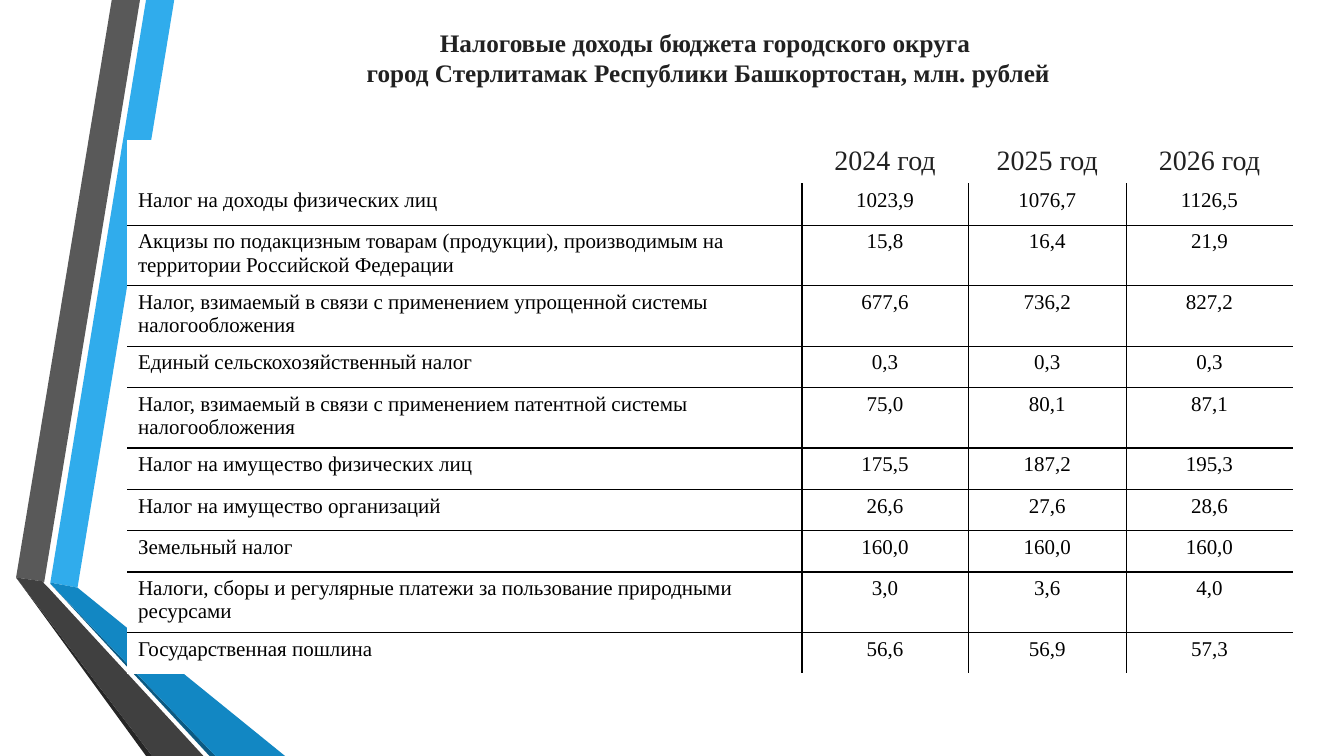
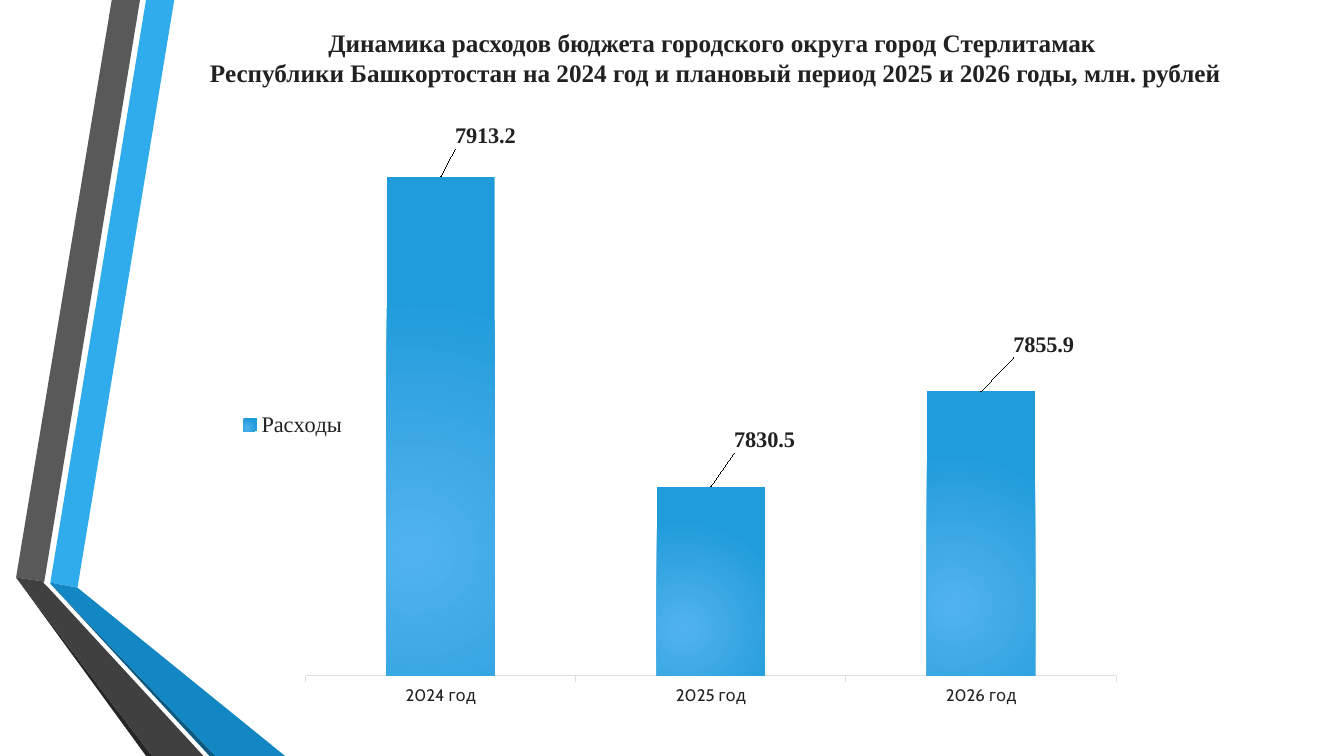
from dataclasses import dataclass

from pptx import Presentation
from pptx.chart.data import CategoryChartData
from pptx.dml.color import RGBColor
from pptx.enum.chart import XL_CHART_TYPE, XL_LABEL_POSITION, XL_LEGEND_POSITION, XL_TICK_MARK
from pptx.enum.text import MSO_ANCHOR, PP_ALIGN
from pptx.oxml import parse_xml
from pptx.oxml.ns import nsdecls, qn
from pptx.util import Inches, Pt

COLUMN_CHART = XL_CHART_TYPE.COLUMN_CLUSTERED
OUTSIDE_END = XL_LABEL_POSITION.OUTSIDE_END
LEGEND_LEFT = XL_LEGEND_POSITION.LEFT
TICK_OUTSIDE = XL_TICK_MARK.OUTSIDE
MIDDLE = MSO_ANCHOR.MIDDLE
LEFT, CENTER = PP_ALIGN.LEFT, PP_ALIGN.CENTER


@dataclass(frozen=True)
class Theme:
    serif: str = "Times New Roman"
    sans: str = "Cabin"
    ink: str = "212121"
    black: str = "000000"
    white: str = "FFFFFF"
    axis: str = "DEDEDE"
    bar_light: str = "51B3ED"
    bar_dark: str = "219CDB"
    title_size: float = 18
    header_size: float = 20
    body_size: float = 15
    label_size: float = 16
    axis_size: float = 12
    chart_size: float = 10
    border: float = 1


THEME = Theme()

BANDS = [
    ("30ACEC", [(0.5, 5.78), (0.77, 5.83), (1.73, 0), (1.45, 0)]),
    ("595959", [(1.39, 0), (1.11, 0), (0.16, 5.73), (0.44, 5.77)]),
    ("262626", [(0.16, 5.73), (1.45, 7.5), (1.51, 7.5)]),
    ("0C5A82", [(0.5, 5.79), (2.08, 7.5), (2.14, 7.5)]),
    ("1287C3", [(0.5, 5.79), (2.14, 7.5), (2.83, 7.5), (0.77, 5.83), (0.5, 5.78)]),
    ("404040", [(2.02, 7.5), (0.48, 5.83), (0.43, 5.78), (0.44, 5.77), (0.16, 5.73), (1.51, 7.5)]),
]

YEARS = ["2024 год", "2025 год", "2026 год"]

TAX_TITLE = (
    "Налоговые доходы бюджета городского округа \v"
    "город Стерлитамак Республики Башкортостан, млн. рублей"
)
TAX_ROWS = [
    ("Налог на доходы физических лиц", "1023,9", "1076,7", "1126,5"),
    ("Акцизы по подакцизным товарам (продукции), производимым на территории Российской Федерации",
     "15,8", "16,4", "21,9"),
    ("Налог, взимаемый в связи с применением упрощенной системы налогообложения",
     "677,6", "736,2", "827,2"),
    ("Единый сельскохозяйственный налог", "0,3", "0,3", "0,3"),
    ("Налог, взимаемый в связи с применением патентной системы налогообложения",
     "75,0", "80,1", "87,1"),
    ("Налог на имущество физических лиц", "175,5", "187,2", "195,3"),
    ("Налог на имущество организаций", "26,6", "27,6", "28,6"),
    ("Земельный налог", "160,0", "160,0", "160,0"),
    ("Налоги, сборы и регулярные платежи за пользование природными ресурсами",
     "3,0", "3,6", "4,0"),
    ("Государственная пошлина", "56,6", "56,9", "57,3"),
]
COLUMN_WIDTHS = [6.69, 1.65, 1.57, 1.65]
HEADER_HEIGHT, LINE_HEIGHT, TWO_LINE_HEIGHT = 0.43, 0.41, 0.6
LONGEST_LINE = 60

SPENDING_TITLE = (
    "Динамика расходов бюджета городского округа город Стерлитамак \v"
    "Республики Башкортостан на 2024 год и плановый период 2025 и 2026 годы, млн. рублей"
)
SPENDING_NAME = "Расходы"
SPENDING = [7913.2, 7830.5, 7855.9]
SPENDING_RANGE = (7780, 7922)
LABEL_SHIFTS = [(0.05, -0.04), (0.06, -0.05), (0.07, -0.05)]
PLOT_AREA = {"x": 0.087, "y": 0.027, "w": 0.905, "h": 0.896}


def color(value):
    return RGBColor.from_string(value)


def style_font(font, size, name=THEME.serif, ink=THEME.ink, bold=False):
    font.size = Pt(size)
    font.name = name
    font.bold = bold
    font.color.rgb = color(ink)


def write_text(frame, text, align=LEFT, **font_format):
    frame.word_wrap = True
    paragraph = frame.paragraphs[0]
    paragraph.text = text
    paragraph.alignment = align
    for run in paragraph.runs:
        style_font(run.font, **font_format)


def move_bands_to_layout(slide, layout):
    for placeholder in list(layout.placeholders):
        placeholder.element.getparent().remove(placeholder.element)
    group = slide.shapes.add_group_shape()
    for fill, outline in BANDS:
        points = [(Inches(x), Inches(y)) for x, y in outline]
        builder = group.shapes.build_freeform(*points[0], scale=1.0)
        builder.add_line_segments(points[1:], close=True)
        shape = builder.convert_to_shape()
        shape.shadow.inherit = False
        shape.fill.solid()
        shape.fill.fore_color.rgb = color(fill)
        shape.line.fill.background()
    layout.shapes.element.append(group.element)


def add_title(slide, text, width):
    box = slide.shapes.add_textbox(Inches(1.39), Inches(0.3), Inches(width), Inches(0.54))
    box.text_frame.vertical_anchor = MIDDLE
    write_text(box.text_frame, text, align=CENTER, size=THEME.title_size, bold=True)


def set_borders(cell, edge_colors):
    properties = cell._tc.get_or_add_tcPr()
    for position, (side, edge) in enumerate(edge_colors.items()):
        properties.insert(position, parse_xml(
            f'<a:ln{side} {nsdecls("a")} w="{Pt(THEME.border)}"><a:solidFill>'
            f'<a:srgbClr val="{edge}"/></a:solidFill></a:ln{side}>'))


def add_tax_table(slide):
    rows = [("", *YEARS), *TAX_ROWS]
    heights = [HEADER_HEIGHT] + [
        TWO_LINE_HEIGHT if len(row[0]) > LONGEST_LINE else LINE_HEIGHT for row in TAX_ROWS]
    frame = slide.shapes.add_table(
        len(rows), len(COLUMN_WIDTHS), Inches(1.27), Inches(1.39),
        Inches(sum(COLUMN_WIDTHS)), Inches(sum(heights)))
    table = frame.table
    table.first_row = table.horz_banding = False
    for column, width in zip(table.columns, COLUMN_WIDTHS):
        column.width = Inches(width)

    def edge_color(row, column, row_step, column_step):
        neighbour_row, neighbour_column = row + row_step, column + column_step
        inside = (row > 0 and 0 < neighbour_row < len(rows)
                  and 0 <= neighbour_column < len(COLUMN_WIDTHS))
        return THEME.black if inside else THEME.white

    for row_index, (row, height) in enumerate(zip(rows, heights)):
        table.rows[row_index].height = Inches(height)
        is_header = row_index == 0
        for column_index, text in enumerate(row):
            cell = table.cell(row_index, column_index)
            cell.fill.solid()
            cell.fill.fore_color.rgb = color(THEME.white)
            write_text(cell.text_frame, text,
                       align=CENTER if column_index else LEFT,
                       size=THEME.header_size if is_header else THEME.body_size,
                       ink=THEME.ink if is_header else THEME.black)
            steps = {"L": (0, -1), "R": (0, 1), "T": (-1, 0), "B": (1, 0)}
            set_borders(cell, {side: edge_color(row_index, column_index, *step)
                               for side, step in steps.items()})


def manual_layout(values, head=""):
    numbers = "".join(f'<c:{key} val="{value}"/>' for key, value in values.items())
    return parse_xml(f'<c:layout {nsdecls("c")}><c:manualLayout>{head}{numbers}'
                     '</c:manualLayout></c:layout>')


def fill_radial(fill):
    fill.gradient()
    for stop, shade in zip(fill.gradient_stops, (THEME.bar_light, THEME.bar_dark)):
        stop.color.rgb = color(shade)


def place_chart_parts(chart):
    plot_area = chart.element.find(".//" + qn("c:plotArea"))
    for layout in plot_area.findall(qn("c:layout")):
        plot_area.remove(layout)
    plot_area.insert(0, manual_layout(
        PLOT_AREA, '<c:layoutTarget val="inner"/><c:xMode val="edge"/><c:yMode val="edge"/>'))
    for label, (x, y) in zip(plot_area.iter(qn("c:dLbl")), LABEL_SHIFTS):
        label.insert(1, manual_layout({"x": x, "y": y}))
    linear = plot_area.find(".//" + qn("a:lin"))
    linear.getparent().replace(linear, parse_xml(
        f'<a:path {nsdecls("a")} path="circle">'
        '<a:fillToRect l="50000" t="100000" r="100000" b="50000"/></a:path>'))


def add_spending_chart(slide):
    data = CategoryChartData(number_format="0.0")
    data.categories = YEARS
    data.add_series(SPENDING_NAME, SPENDING)
    chart = slide.shapes.add_chart(
        COLUMN_CHART, Inches(2.26), Inches(1.23), Inches(8.89), Inches(5.93), data).chart
    style_font(chart.font, THEME.chart_size, name=THEME.sans, ink=THEME.black)
    chart.has_title = False
    chart.has_legend = True
    chart.legend.position = LEGEND_LEFT
    chart.legend.include_in_layout = False
    style_font(chart.legend.font, THEME.label_size)

    value_axis = chart.value_axis
    value_axis.minimum_scale, value_axis.maximum_scale = SPENDING_RANGE
    value_axis.has_major_gridlines = False
    value_axis.visible = False
    category_axis = chart.category_axis
    category_axis.major_tick_mark = TICK_OUTSIDE
    category_axis.format.line.color.rgb = color(THEME.axis)
    category_axis.format.line.width = Pt(0.75)
    style_font(category_axis.tick_labels.font, THEME.axis_size, name=THEME.sans)

    plot = chart.plots[0]
    plot.gap_width = 150
    plot.vary_by_categories = False
    series = plot.series[0]
    fill_radial(series.format.fill)
    labels = series.data_labels
    labels.show_value = True
    labels.number_format = "0.0"
    labels.number_format_is_linked = False
    for label in [labels, *(series.points[i].data_label for i in range(len(SPENDING)))]:
        label.position = OUTSIDE_END
        style_font(label.font, THEME.label_size, bold=True)
    place_chart_parts(chart)


def main():
    presentation = Presentation()
    presentation.slide_width, presentation.slide_height = Inches(13.34), Inches(7.5)
    layout = presentation.slide_layouts[6]

    tax_slide = presentation.slides.add_slide(layout)
    move_bands_to_layout(tax_slide, layout)
    add_title(tax_slide, TAX_TITLE, 11.28)
    add_tax_table(tax_slide)

    spending_slide = presentation.slides.add_slide(layout)
    add_title(spending_slide, SPENDING_TITLE, 11.42)
    add_spending_chart(spending_slide)

    presentation.save("out.pptx")


if __name__ == "__main__":
    main()
